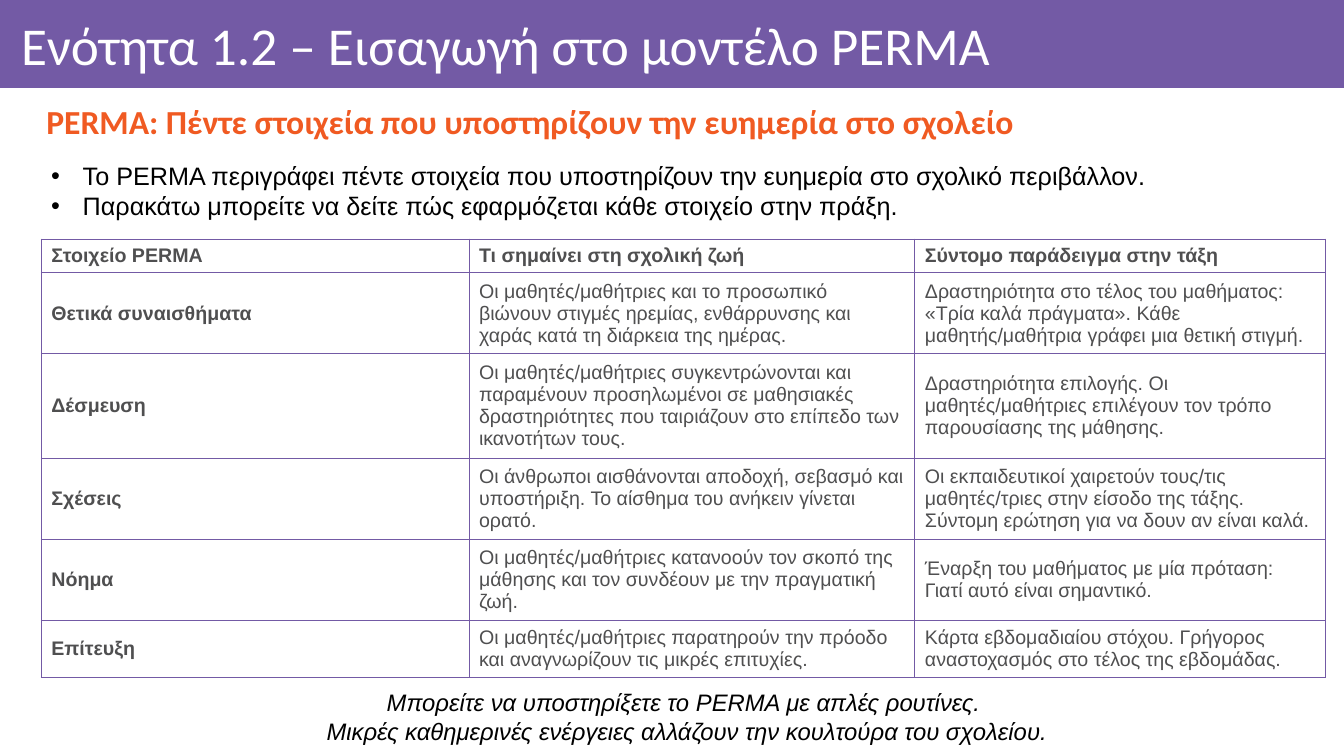
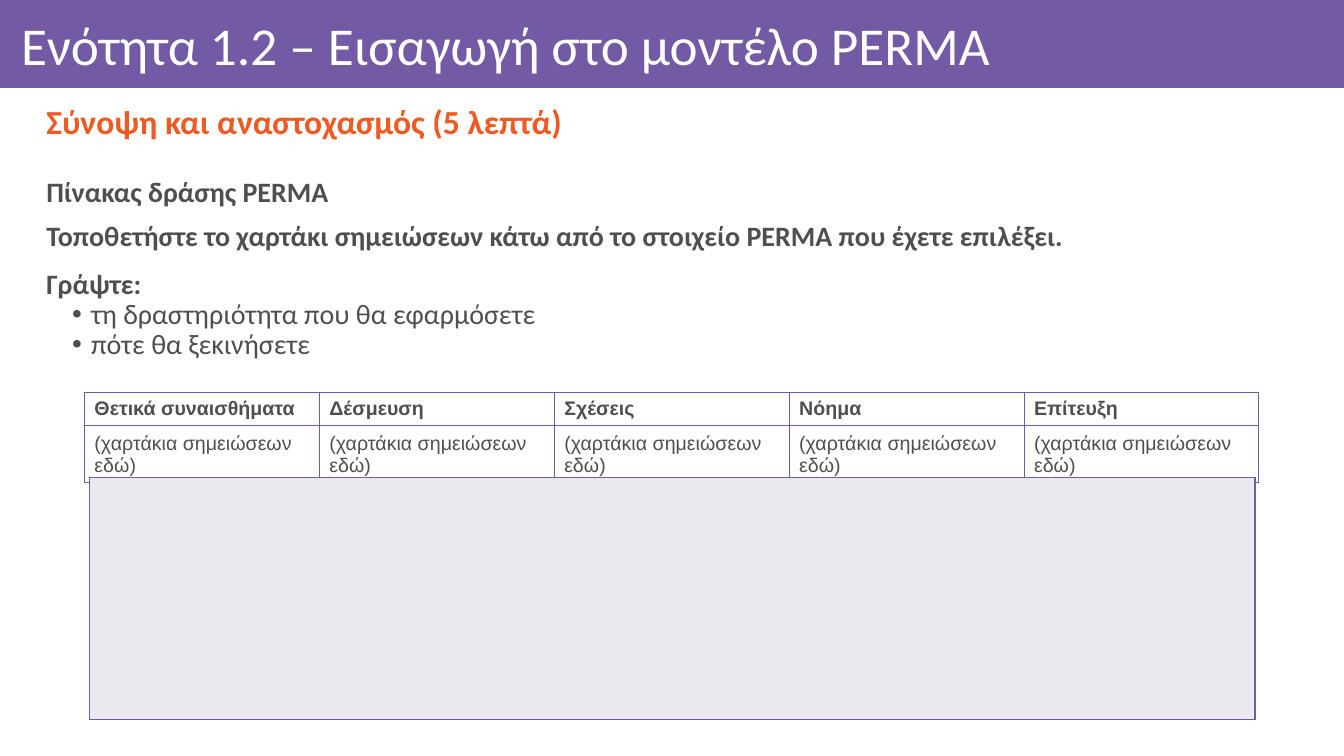
"""Build two slides of a PERMA training unit with a shared title band."""
from dataclasses import dataclass

from lxml import etree
from pptx import Presentation
from pptx.dml.color import RGBColor
from pptx.enum.shapes import MSO_SHAPE
from pptx.enum.text import MSO_ANCHOR, PP_ALIGN
from pptx.oxml.ns import qn
from pptx.util import Pt

RECT = MSO_SHAPE.RECTANGLE
TOP, MIDDLE = MSO_ANCHOR.TOP, MSO_ANCHOR.MIDDLE
LEFT, CENTER, JUSTIFY = PP_ALIGN.LEFT, PP_ALIGN.CENTER, PP_ALIGN.JUSTIFY

WIDTH, HEIGHT = 960, 540
PURPLE, ORANGE, GREY = "735AA5", "F05A22", "4F4F50"
BLACK, WHITE, LILAC = "000000", "FFFFFF", "EBE9F0"
HEADING_FONT, BODY_FONT = "Calibri", "Arial"
INSETS = (7.2, 3.6, 7.2, 3.6)

UNIT_TITLE = "Ενότητα 1.2 – Εισαγωγή στο μοντέλο PERMA"
ELEMENTS = ["Θετικά συναισθήματα", "Δέσμευση", "Σχέσεις", "Νόημα", "Επίτευξη"]
MEANINGS = [
    "Οι μαθητές/μαθήτριες και το προσωπικό βιώνουν στιγμές ηρεμίας, ενθάρρυνσης και χαράς "
    "κατά τη διάρκεια της ημέρας.",
    "Οι μαθητές/μαθήτριες συγκεντρώνονται και παραμένουν προσηλωμένοι σε μαθησιακές "
    "δραστηριότητες που ταιριάζουν στο επίπεδο των ικανοτήτων τους.",
    "Οι άνθρωποι αισθάνονται αποδοχή, σεβασμό και υποστήριξη. Το αίσθημα του ανήκειν "
    "γίνεται ορατό.",
    "Οι μαθητές/μαθήτριες κατανοούν τον σκοπό της μάθησης και τον συνδέουν με την "
    "πραγματική ζωή.",
    "Οι μαθητές/μαθήτριες παρατηρούν την πρόοδο και αναγνωρίζουν τις μικρές επιτυχίες.",
]
EXAMPLES = [
    "Δραστηριότητα στο τέλος του μαθήματος: «Τρία καλά πράγματα». Κάθε μαθητής/μαθήτρια "
    "γράφει μια θετική στιγμή.",
    "Δραστηριότητα επιλογής. Οι μαθητές/μαθήτριες επιλέγουν τον τρόπο παρουσίασης της "
    "μάθησης.",
    "Οι εκπαιδευτικοί χαιρετούν τους/τις μαθητές/τριες στην είσοδο της τάξης. Σύντομη "
    "ερώτηση για να δουν αν είναι καλά.",
    "Έναρξη του μαθήματος με μία πρόταση: Γιατί αυτό είναι σημαντικό.",
    "Κάρτα εβδομαδιαίου στόχου. Γρήγορος αναστοχασμός στο τέλος της εβδομάδας.",
]


@dataclass(frozen=True)
class Box:
    """Position and size in points."""
    x: float
    y: float
    w: float
    h: float


@dataclass(frozen=True)
class Style:
    """Character and paragraph settings."""
    size: float
    color: str
    font: str = BODY_FONT
    bold: bool = False
    italic: bool = False
    align: PP_ALIGN = LEFT
    spacing: float = 1
    before: float = 0
    after: float = 0
    margin: float = 0
    hanging: float = 0
    bullet: bool = False


TITLE = Style(38, WHITE, HEADING_FONT, spacing=0.9)
SUBTITLE = Style(24, ORANGE, HEADING_FONT, bold=True, align=JUSTIFY, spacing=0.9,
                 before=10, margin=36, hanging=18)
POINT = Style(18, BLACK, margin=22.5, hanging=22.5, bullet=True)
CLOSING = Style(17, BLACK, italic=True, align=CENTER)
TASK = Style(20, GREY, HEADING_FONT, bold=True, spacing=0.9, before=10,
             margin=36, hanging=18)
INSTRUCTION = Style(20, GREY, HEADING_FONT, bold=True, spacing=0.9, before=10, after=6,
                    margin=36, hanging=18)
PROMPT = Style(20, GREY, HEADING_FONT, bold=True, spacing=0.9, before=6,
               margin=36, hanging=18)
PROMPT_ITEM = Style(20, GREY, HEADING_FONT, spacing=0.9, margin=50, hanging=13.5,
                    bullet=True)
CELL = Style(14, GREY)
HEADER_CELL = Style(14, GREY, bold=True)


def rgb(color: str) -> RGBColor:
    """Turn a hex string into a colour."""
    return RGBColor.from_string(color)


def write(p, text: str, style: Style) -> None:
    """Fill a paragraph with styled text."""
    p.add_run().text = text
    p.alignment, p.line_spacing = style.align, style.spacing
    p.space_before, p.space_after = Pt(style.before), Pt(style.after)
    font = p.font
    font.name, font.size = style.font, Pt(style.size)
    font.bold, font.italic = style.bold, style.italic
    font.color.rgb = rgb(style.color)
    pPr = p._p.get_or_add_pPr()
    pPr.set("marL", str(Pt(style.margin)))
    pPr.set("indent", str(-Pt(style.hanging)))
    if style.bullet:
        bullet_font = etree.Element(qn("a:buFont"), typeface=BODY_FONT)
        bullet = etree.Element(qn("a:buChar"), char="•")
        default = pPr.find(qn("a:defRPr"))
        default.addprevious(bullet_font)
        default.addprevious(bullet)


def add_text(s, box: Box, lines: list[tuple[str, Style]], anchor: MSO_ANCHOR = TOP,
             insets: tuple[float, float, float, float] = INSETS) -> None:
    """Add a text box with one paragraph per line."""
    tf = s.shapes.add_textbox(Pt(box.x), Pt(box.y), Pt(box.w), Pt(box.h)).text_frame
    tf.word_wrap, tf.vertical_anchor = True, anchor
    tf.margin_left, tf.margin_top, tf.margin_right, tf.margin_bottom = map(Pt, insets)
    for i, (text, style) in enumerate(lines):
        write(tf.add_paragraph() if i else tf.paragraphs[0], text, style)


def set_borders(cell, width: float) -> None:
    """Draw purple borders on all sides of a cell."""
    tcPr = cell._tc.get_or_add_tcPr()
    for side in ("lnL", "lnR", "lnT", "lnB"):
        line = etree.SubElement(tcPr, qn(f"a:{side}"), w=str(Pt(width)))
        fill = etree.SubElement(line, qn("a:solidFill"))
        etree.SubElement(fill, qn("a:srgbClr"), val=PURPLE)


def add_grid(s, x: float, y: float, widths: list[float], heights: list[float],
             rows: list[list[str]], row_headers: bool = False, border: float = 0.75,
             fill: str = "") -> None:
    """Add a bordered table with a bold header row."""
    table = s.shapes.add_table(len(heights), len(widths), Pt(x), Pt(y),
                               Pt(sum(widths)), Pt(sum(heights))).table
    table.first_row = table.horz_banding = False
    for column, width in zip(table.columns, widths):
        column.width = Pt(width)
    for row, height in zip(table.rows, heights):
        row.height = Pt(height)
    for r, texts in enumerate(rows):
        for c, text in enumerate(texts):
            cell = table.cell(r, c)
            cell.vertical_anchor = MIDDLE
            set_borders(cell, border)
            if fill:
                cell.fill.solid()
                cell.fill.fore_color.rgb = rgb(fill)
            else:
                cell.fill.background()
            if text:
                bold = r == 0 or (row_headers and c == 0)
                write(cell.text_frame.paragraphs[0], text, HEADER_CELL if bold else CELL)


def add_unit_slide(prs, subtitle: str):
    """Add a slide with the title band and a subtitle."""
    s = prs.slides.add_slide(prs.slide_layouts[6])
    band = s.shapes.add_shape(RECT, 0, 0, Pt(WIDTH), Pt(62.8))
    band.shadow.inherit = False
    band.fill.solid()
    band.fill.fore_color.rgb = rgb(PURPLE)
    band.line.fill.background()
    add_text(s, Box(8, 6.5, 940, 56), [(UNIT_TITLE, TITLE)], MIDDLE, (7.2, 4.3, 4.3, 4.3))
    add_text(s, Box(8, 67, 940, 43), [(subtitle, SUBTITLE)], MIDDLE)
    return s


def build_overview(prs) -> None:
    """Build the slide that explains the five elements."""
    s = add_unit_slide(prs, "PERMA: Πέντε στοιχεία που υποστηρίζουν την ευημερία στο σχολείο")
    add_text(s, Box(29.5, 111, 875, 51), [
        ("Το PERMA περιγράφει πέντε στοιχεία που υποστηρίζουν την ευημερία στο σχολικό "
         "περιβάλλον.", POINT),
        ("Παρακάτω μπορείτε να δείτε πώς εφαρμόζεται κάθε στοιχείο στην πράξη.", POINT),
    ])
    header = ["Στοιχείο PERMA", "Τι σημαίνει στη σχολική ζωή", "Σύντομο παράδειγμα στην τάξη"]
    rows = [header, *map(list, zip(ELEMENTS, MEANINGS, EXAMPLES))]
    add_grid(s, 29.5, 170.7, [305.5, 318.5, 293], [23.5, 58, 74, 58, 58, 40.5], rows,
             row_headers=True)
    add_text(s, Box(35, 488, 911.5, 48), [
        ("Μπορείτε να υποστηρίξετε το PERMA με απλές ρουτίνες. ", CLOSING),
        ("Μικρές καθημερινές ενέργειες αλλάζουν την κουλτούρα του σχολείου.", CLOSING),
    ])


def build_reflection(prs) -> None:
    """Build the slide with the action board."""
    s = add_unit_slide(prs, "Σύνοψη και αναστοχασμός (5 λεπτά)")
    add_text(s, Box(8, 124, 922, 150), [
        ("Πίνακας δράσης PERMA", TASK),
        ("Τοποθετήστε το χαρτάκι σημειώσεων κάτω από το στοιχείο PERMA που έχετε επιλέξει.",
         INSTRUCTION),
        ("Γράψτε:", PROMPT),
        ("τη δραστηριότητα που θα εφαρμόσετε", PROMPT_ITEM),
        ("πότε θα ξεκινήσετε", PROMPT_ITEM),
    ])
    count = len(ELEMENTS)
    add_grid(s, 60.3, 280, [167.8] * count, [23, 38.5],
             [ELEMENTS, ["(χαρτάκια σημειώσεων εδώ)"] * count])
    add_grid(s, 64, 341.2, [832.5], [172.8], [[""]], border=1, fill=LILAC)


def main() -> None:
    """Build and save the presentation."""
    prs = Presentation()
    prs.slide_width, prs.slide_height = Pt(WIDTH), Pt(HEIGHT)
    build_overview(prs)
    build_reflection(prs)
    prs.save("out.pptx")


if __name__ == "__main__":
    main()
